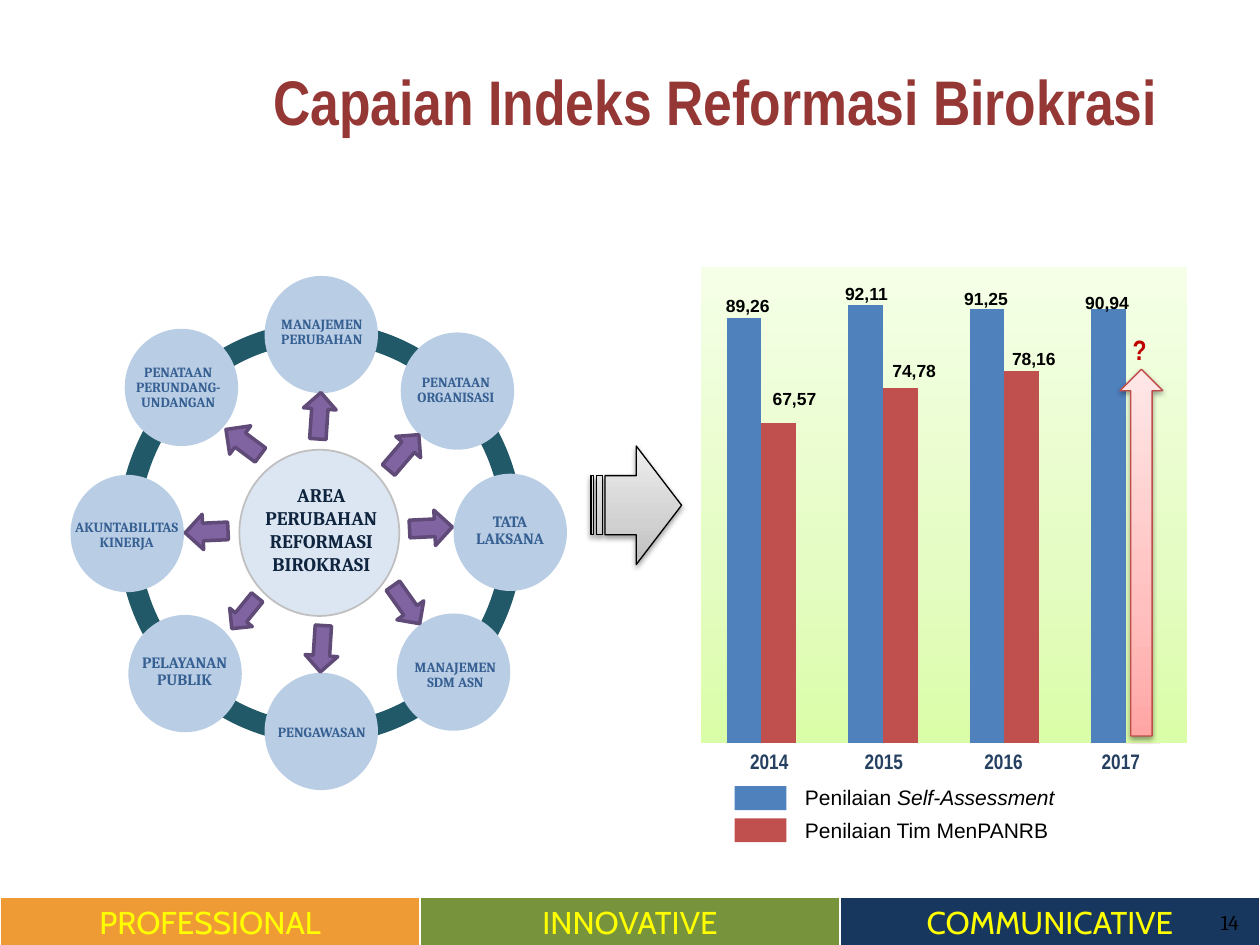
import pptx
import pptx.chart.data
import pptx.dml.color
import pptx.enum.chart
import pptx.enum.shapes
import pptx.enum.text
import pptx.oxml
import pptx.oxml.ns
import pptx.util
from dataclasses import dataclass

Pt = pptx.util.Pt
Kind = pptx.enum.shapes.MSO_SHAPE
Align = pptx.enum.text.PP_ALIGN
Anchor = pptx.enum.text.MSO_ANCHOR
Rgb = pptx.dml.color.RGBColor.from_string
qn = pptx.oxml.ns.qn
spaces = pptx.oxml.ns.nsdecls("a", "c")


@dataclass
class Theme:
    head: str = "Arial Narrow"
    body: str = "Arial"
    serif: str = "Cambria"
    foot: str = "Cabin"
    black: str = "000000"
    title: str = "953735"
    year: str = "254061"
    mark: str = "C00000"
    ring: str = "215968"
    hub: str = "DCE6F2"
    rim: str = "BFBFBF"
    core: str = "0F243E"
    node: str = "B9CDE5"
    label: str = "376092"
    arrow: str = "8064A2"
    edge: str = "5F4A78"
    blue: str = "4F81BD"
    red: str = "C0504D"
    rise: str = "BF4C48"
    yellow: str = "FFFF00"
    bands: tuple = ("EF9B35", "77933C", "17375E")
    green: tuple = ("DAFDA7", "E4FCC2", "F5FFE7")
    pink: tuple = ("FFA6A5", "FFC0BF", "FFE7E7")
    gray: tuple = ("BDBDBD", "D1D1D1", "EEEEEE")
    huge: int = 36
    large: int = 18
    big: int = 16
    mid: int = 12
    core_size: int = 11
    small: int = 10


look = Theme()


def write(frame, lines, size, face, color, bold=True, align=Align.CENTER, space=None):
    frame.word_wrap = True
    for i, line in enumerate(lines):
        para = frame.add_paragraph() if i else frame.paragraphs[0]
        para.alignment = align
        if space:
            para.line_spacing = space
        para.font.size = Pt(size)
        para.font.name = face
        para.font.bold = bold
        para.font.color.rgb = Rgb(color)
        for j, part in enumerate(line.split("_")):
            run = para.add_run()
            run.text = part
            if j:
                run.font.italic = True


def draw(kind, box, fill=None, line=None, width=1, turn=0):
    shape = slide.shapes.add_shape(kind, *map(Pt, box))
    shape.shadow.inherit = False
    shape.rotation = turn
    if fill is None:
        shape.fill.background()
    elif isinstance(fill, str):
        shape.fill.solid()
        shape.fill.fore_color.rgb = Rgb(fill)
    if line:
        shape.line.color.rgb = Rgb(line)
        shape.line.width = Pt(width)
    else:
        shape.line.fill.background()
    return shape


deck = pptx.Presentation()
deck.slide_width, deck.slide_height = Pt(720), Pt(540)
slide = deck.slides.add_slide(deck.slide_layouts[5])

title = slide.shapes.title
title.left, title.top, title.width, title.height = map(Pt, (149, 31.7, 544.3, 51))
title.text_frame.vertical_anchor = Anchor.BOTTOM
write(title.text_frame, ["Capaian Indeks Reformasi Birokrasi"], look.huge, look.head, look.title, align=Align.LEFT)

table = slide.shapes.add_table(1, 3, Pt(0), Pt(512.7), Pt(720), Pt(29.5)).table
words = ["PROFESSIONAL", "INNOVATIVE", "COMMUNICATIVE"]
for cell, word, band in zip(table.rows[0].cells, words, look.bands):
    cell.fill.solid()
    cell.fill.fore_color.rgb = Rgb(band)
    cell.vertical_anchor = Anchor.MIDDLE
    write(cell.text_frame, [word], look.large, look.foot, look.yellow, bold=False)

draw(Kind.OVAL, (73.4, 190, 219.6, 229), line=look.ring, width=12)
draw(Kind.OVAL, (136.8, 257, 91.4, 95), look.hub, look.rim)

areas = [
    (["MANAJEMEN PERUBAHAN"], 8, (151.2, 157.7), (148.3, 170.6, 71.3, 47.5), 1, (169.2, 228.2, 26.6, 18.7), 273.8),
    (["PENATAAN ORGANISASI"], 8, (229, 190), (220.6, 199.4, 80, 56.2), 1, (217.4, 249.1, 26.6, 18.7), 310.6),
    (["TATA", "LAKSANA"], 9, (259.2, 270.7), (251.5, 280, 80, 56.2), 1, (234, 291.6, 24.5, 20.2), 357.3),
    (["MANAJEMEN", "SDM ASN"], 8, (226.8, 350.6), (220.3, 362.2, 80, 56.2), 1, (218.9, 336.2, 26.6, 18.7), 54.7),
    (["PENGAWASAN"], 8, (151.2, 384.5), (144, 391, 80, 56.2), 0, (170.6, 361.4, 26.6, 18.7), 93.7),
    (["PELAYANAN", "PUBLIK"], 9, (73.4, 351.4), (65.5, 360.7, 80, 56.2), 1, (128.2, 342, 23, 16.6), 129),
    (["AKUNTABILITAS", "KINERJA"], 8, (40.3, 271.4), (31, 278, 82.8, 56.2), 0, (105.8, 293.8, 24.5, 20.2), 177.4),
    (["PENATAAN PERUNDANG-UNDANGAN"], 8, (71.3, 187.9), (70.6, 193.7, 62.6, 56.2), 0, (126.7, 242.6, 24.5, 20.2), 216.6),
]
for _, _, spot, _, _, arrow, turn in areas:
    draw(Kind.OVAL, (*spot, 64.8, 67), look.node)
    draw(Kind.RIGHT_ARROW, arrow, look.arrow, look.edge, 2, turn)

core = (["AREA PERUBAHAN", "REFORMASI BIROKRASI"], look.core_size, look.core, None, (144.7, 268.6, 77.8, 67.7), 0)
notes = [(lines, size, look.label, 0.9, box, lift) for lines, size, _, box, lift, _, _ in areas]
for lines, size, color, space, box, lift in [core, *notes]:
    frame = slide.shapes.add_textbox(*map(Pt, box)).text_frame
    frame.margin_left = frame.margin_right = frame.margin_top = Pt(1.44)
    frame.margin_bottom = Pt(1.44 + lift * size * 1.05)
    frame.vertical_anchor = Anchor.MIDDLE
    write(frame, lines, size, look.serif, color, space=space)

data = pptx.chart.data.CategoryChartData()
data.categories = ["1", "2", "3", "4"]
data.add_series("Series 1", (97, 100, 99, 99))
data.add_series("Series 2", (73, 81, 85, 0))
chart = slide.shapes.add_chart(
    pptx.enum.chart.XL_CHART_TYPE.COLUMN_CLUSTERED, Pt(394.6), Pt(146.9), Pt(289.4), Pt(283.7), data
).chart
chart.has_legend = chart.has_title = False
chart.font.name = look.serif
chart.font.size = Pt(look.small)
chart.font.color.rgb = Rgb(look.black)
chart.category_axis.visible = chart.value_axis.visible = False
chart.value_axis.has_major_gridlines = False
chart.value_axis.minimum_scale, chart.value_axis.maximum_scale = 0, 108.7
plot = chart.plots[0]
plot.gap_width, plot.overlap, plot.vary_by_categories = 150, 0, False
for series, color in zip(plot.series, (look.blue, look.red)):
    series.format.fill.solid()
    series.format.fill.fore_color.rgb = Rgb(color)
area = chart.element.find(".//" + qn("c:plotArea"))
for old in area.findall(qn("c:layout")):
    area.remove(old)
marks = "".join(f'<c:{k} val="{v}"/>' for k, v in (("x", 0.02), ("y", 0.02), ("w", 0.96), ("h", 0.96)))
area.insert(0, pptx.oxml.parse_xml(
    f'<c:layout {spaces}><c:manualLayout><c:layoutTarget val="inner"/><c:xMode val="edge"/>'
    f'<c:yMode val="edge"/>{marks}</c:manualLayout></c:layout>'))
back = pptx.oxml.parse_xml(f"<c:spPr {spaces}/>")
area.append(back)

rise = draw(Kind.UP_ARROW, (640, 211, 24.5, 209.5), look.pink, look.rise, 0.75)
step = draw(Kind.STRIPED_RIGHT_ARROW, (337.7, 254.9, 51.8, 67.7), look.gray, look.black, 0.75)
for shape in (rise, step):
    shape.element.spPr.find(qn("a:effectLst")).append(pptx.oxml.parse_xml(
        f'<a:outerShdw {spaces} blurRad="40000" dist="20000" dir="5400000" rotWithShape="0">'
        f'<a:srgbClr val="{look.black}"><a:alpha val="38000"/></a:srgbClr></a:outerShdw>'))
for owner, spot, tones in (
    (back, 0, look.green), (rise.element.spPr, 2, look.pink), (step.element.spPr, 2, look.gray)
):
    stops = "".join(
        f'<a:gs pos="{at}"><a:srgbClr val="{tone}"/></a:gs>' for at, tone in zip((0, 35000, 100000), tones))
    owner.insert(spot, pptx.oxml.parse_xml(
        f'<a:gradFill {spaces} rotWithShape="1"><a:gsLst>{stops}</a:gsLst>'
        f'<a:lin ang="16200000" scaled="0"/></a:gradFill>'))

years = [("2014", 418.3), ("2015", 483.8), ("2016", 552.2), ("2017", 619.2)]
scores = [
    ("89,26", 406, 165), ("92,11", 473.8, 158.4), ("91,25", 542.2, 161.3), ("90,94", 611.3, 163.4),
    ("67,57", 432.7, 218.2), ("74,78", 501.1, 202.3), ("78,16", 569.5, 195.1),
]
tags = [(word, (x, 424, 42.5, 21.6), look.mid, look.head, look.year) for word, x in years]
tags += [(word, (x, y, 42.5, 19.4), look.small, look.body, look.black) for word, x, y in scores]
tags.append(("?", (624.2, 186.5, 54, 26.6), look.big, look.head, look.mark))
for word, box, size, face, color in tags:
    write(slide.shapes.add_textbox(*map(Pt, box)).text_frame, [word], size, face, color)

keys = [("Penilaian _Self-Assessment", look.blue), ("Penilaian Tim MenPANRB", look.red)]
for i, (word, color) in enumerate(keys):
    top = 445 + i * 18.4
    draw(Kind.RECTANGLE, (419.8, top + 4.2, 29.5, 13.7), color)
    frame = slide.shapes.add_textbox(*map(Pt, (452.9, top, 219.6, 21.6))).text_frame
    write(frame, [word], look.mid, look.body, look.black, False, Align.LEFT)

frame = slide.shapes.add_textbox(*map(Pt, (547.2, 517.7, 167.8, 18.7))).text_frame
frame.vertical_anchor = Anchor.MIDDLE
write(frame, ["14"], look.mid, look.serif, look.black, False, Align.RIGHT)

deck.save("out.pptx")
